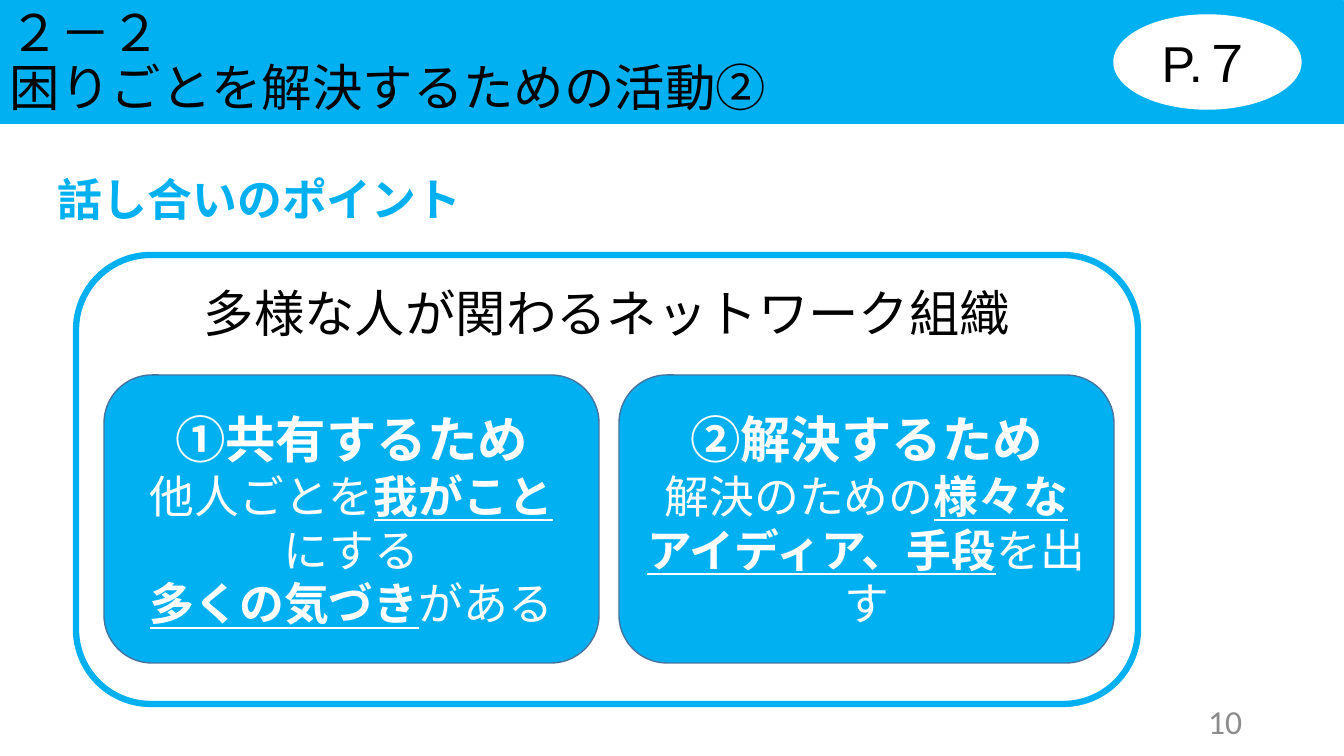
from lxml import etree
from pptx import Presentation
from pptx.dml.color import RGBColor
from pptx.enum.shapes import MSO_SHAPE
from pptx.enum.text import MSO_ANCHOR, PP_ALIGN
from pptx.oxml.ns import qn
from pptx.util import Emu, Pt

RECT, OVAL, ROUND = MSO_SHAPE.RECTANGLE, MSO_SHAPE.OVAL, MSO_SHAPE.ROUNDED_RECTANGLE
TOP, MID = MSO_ANCHOR.TOP, MSO_ANCHOR.MIDDLE
LEFT, MAIN, RIGHT = PP_ALIGN.LEFT, PP_ALIGN.CENTER, PP_ALIGN.RIGHT
SKY = RGBColor(0x00, 0xB0, 0xF0)
EDGE = RGBColor(0x43, 0x73, 0x9E)
GRAY = RGBColor(0x8C, 0x8C, 0x8C)
WHITE = RGBColor(0xFF, 0xFF, 0xFF)
BLACK = RGBColor(0x00, 0x00, 0x00)
NOTO = "Noto Sans CJK JP"
SCALE = 914400 / 100.8


def px(*nums):
    return [Emu(round(n * SCALE)) for n in nums]


def write(shape, lines, face, color, align, anchor, space=1.0):
    frame = shape.text_frame
    frame.word_wrap = True
    frame.vertical_anchor = anchor
    for i, runs in enumerate(lines):
        para = frame.paragraphs[0] if i == 0 else frame.add_paragraph()
        para.alignment = align
        para.line_spacing = space
        for text, size, bold, under in runs:
            run = para.add_run()
            run.text = text
            look = {"name": face, "size": Pt(size), "bold": bold, "underline": under}
            for key, value in look.items():
                setattr(run.font, key, value)
            run.font.color.rgb = color
            east = etree.SubElement(run.font._element, qn("a:ea"))
            east.set("typeface", NOTO)


deck = Presentation()
deck.slide_width, deck.slide_height = px(1344, 756)
slide = deck.slides.add_slide(deck.slide_layouts[6])

title = [[("２－２", 36, False, False)], [("困りごとを解決するための活動②", 36, False, False)]]
page = [[("P.７", 36, False, False)]]
group = [[("多様な人が関わるネットワーク組織", 36, False, False)]]
share = [
    [("①共有するため", 36, True, False)],
    [("他人ごとを", 32, False, False), ("我がこと", 32, True, True), ("にする", 32, False, False)],
    [("多くの気づき", 32, True, True), ("がある", 32, False, False)],
]
solve = [
    [("②解決するため", 36, True, False)],
    [("解決のための", 32, False, False), ("様々な", 32, True, True)],
    [("アイディア、手段", 32, True, True), ("を出す", 32, False, False)],
]

shapes = [
    (RECT, (0, 1, 1344, 123), SKY, SKY, 0.75, title, "Calibri", BLACK, LEFT, MID, 0.9),
    (OVAL, (1114, 15, 187, 94), WHITE, WHITE, 1, page, "Arial", BLACK, MAIN, MID, 1.0),
    (ROUND, (76, 255, 1062, 449), WHITE, SKY, 4.5, group, "Calibri", BLACK, MAIN, TOP, 1.0),
    (ROUND, (104, 375, 495, 288), SKY, EDGE, 1, share, NOTO, WHITE, MAIN, MID, 1.0),
    (ROUND, (619, 375, 495, 288), SKY, EDGE, 1, solve, NOTO, WHITE, MAIN, MID, 1.0),
]
for kind, box, fill, line, width, *words in shapes:
    shape = slide.shapes.add_shape(kind, *px(*box))
    shape.shadow.inherit = False
    shape.fill.solid()
    shape.fill.fore_color.rgb = fill
    shape.line.color.rgb = line
    shape.line.width = Pt(width)
    write(shape, *words)

head = [[("話し合いのポイント", 32, True, False)]]
count = [[("10", 24, False, False)]]
labels = [
    ((48, 173, 1159, 480), head, NOTO, SKY, LEFT, TOP, 0.9),
    ((950, 701, 302, 40), count, "Calibri", GRAY, RIGHT, MID, 1.0),
]
for box, *words in labels:
    write(slide.shapes.add_textbox(*px(*box)), *words)

deck.save("out.pptx")
